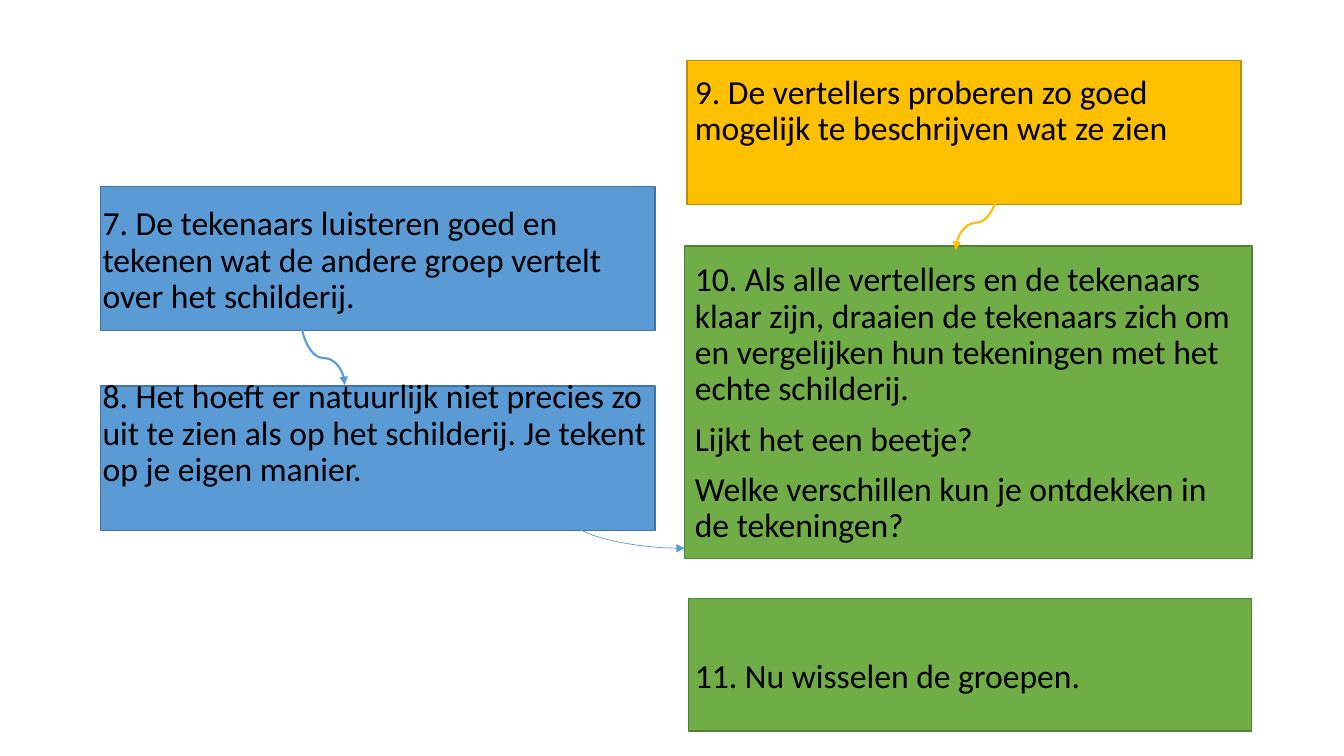
from lxml import etree
from pptx import Presentation
from pptx.dml.color import RGBColor
from pptx.enum.shapes import MSO_CONNECTOR, MSO_SHAPE
from pptx.enum.text import MSO_ANCHOR, MSO_AUTO_SIZE, PP_ALIGN
from pptx.oxml.ns import qn
from pptx.util import Inches, Pt

WIDTH, HEIGHT = Inches(13.33), Inches(7.5)
RECTANGLE = MSO_SHAPE.RECTANGLE
CURVE = MSO_CONNECTOR.CURVE
TOP = MSO_ANCHOR.TOP
LEFT = PP_ALIGN.LEFT
FIXED_SIZE = MSO_AUTO_SIZE.NONE
TWO_CONTENT_LAYOUT = 3

BLUE, BLUE_EDGE = "5B9BD5", "43739E"
GREEN, GREEN_EDGE = "70AD47", "538035"
GOLD, GOLD_EDGE = "FFC000", "BD8E00"
BLACK = "000000"

NORMAL_GAP, BOX_GAP, WIDE_GAP = 10, 46, 82

BOXES = [
    (51.25, 79.2, 41.88, 17.5, GREEN, GREEN_EDGE),
    (51.1, 8, 41.25, 19.07, GOLD, GOLD_EDGE),
    (50.95, 32.53, 42.22, 41.33, GREEN, GREEN_EDGE),
    (7.5, 24.67, 41.25, 19.07, BLUE, BLUE_EDGE),
    (7.5, 51.07, 41.25, 19.07, BLUE, BLUE_EDGE),
]

DRAWER_STEPS = [
    (0, "7. De tekenaars luisteren goed en tekenen wat de andere groep vertelt "
        "over het schilderij."),
    (BOX_GAP, "8. Het hoeft er natuurlijk niet precies zo uit te zien als op het "
              "schilderij. Je tekent op je eigen manier."),
]

TELLER_STEPS = [
    (0, "9. De vertellers proberen zo goed mogelijk te beschrijven wat ze zien"),
    (WIDE_GAP, "10. Als alle vertellers en de tekenaars klaar zijn, draaien de "
               "tekenaars zich om en vergelijken hun tekeningen met het echte "
               "schilderij."),
    (NORMAL_GAP, "Lijkt het een beetje?"),
    (NORMAL_GAP, "Welke verschillen kun je ontdekken in de tekeningen?"),
    (WIDE_GAP, "11. Nu wisselen de groepen."),
]


def across(percent):
    return round(WIDTH * percent / 100)


def down(percent):
    return round(HEIGHT * percent / 100)


def color(code):
    return RGBColor.from_string(code)


def add_box(page, left, top, width, height, fill, edge):
    box = page.shapes.add_shape(
        RECTANGLE, across(left), down(top), across(width), down(height))
    box.shadow.inherit = False
    box.fill.solid()
    box.fill.fore_color.rgb = color(fill)
    box.line.color.rgb = color(edge)
    box.line.width = Pt(1)


def add_step(para, gap, text):
    properties = para._p.get_or_add_pPr()
    properties.set("marL", "0")
    properties.set("indent", "0")
    etree.SubElement(properties, qn("a:buNone"))
    para.alignment = LEFT
    para.line_spacing = 0.9
    para.space_before = Pt(gap)
    para.space_after = Pt(0)
    span = para.add_run()
    span.text = text
    span.font.name = "Calibri"
    span.font.size = Pt(24)
    span.font.color.rgb = color(BLACK)


def fill_body(page, index, left, top, width, height, steps):
    body = page.placeholders[index]
    body.left, body.top = across(left), down(top)
    body.width, body.height = across(width), down(height)
    page.shapes._spTree.append(body._element)
    frame = body.text_frame
    frame.word_wrap = True
    frame.auto_size = FIXED_SIZE
    frame.vertical_anchor = TOP
    for number, (gap, text) in enumerate(steps):
        para = frame.add_paragraph() if number else frame.paragraphs[0]
        add_step(para, gap, text)


def style_arrow(arrow, code, weight):
    arrow.line.color.rgb = color(code)
    arrow.line.width = Pt(weight)
    etree.SubElement(arrow.line._get_or_add_ln(), qn("a:tailEnd"), type="triangle")
    etree.SubElement(arrow._element.spPr, qn("a:effectLst"))


def add_side_arrow(page, start, end, code, weight):
    arrow = page.shapes.add_connector(
        CURVE, across(start[0]), down(start[1]), across(end[0]), down(end[1]))
    style_arrow(arrow, code, weight)


def add_down_arrow(page, start, end, code, weight):
    x1, y1, x2, y2 = across(start[0]), down(start[1]), across(end[0]), down(end[1])
    center_x, center_y = (x1 + x2) // 2, (y1 + y2) // 2
    half_length, half_shift = (y2 - y1) // 2, abs(x2 - x1) // 2
    side = 1 if x2 < x1 else -1
    arrow = page.shapes.add_connector(
        CURVE,
        center_x - side * half_length, center_y - half_shift,
        center_x + side * half_length, center_y + half_shift)
    properties = arrow._element.spPr
    quarter_turn = 90 if side == 1 else 270
    properties.find(qn("a:xfrm")).set("rot", str(quarter_turn * 60000))
    guides = properties.find(qn("a:prstGeom")).find(qn("a:avLst"))
    etree.SubElement(guides, qn("a:gd"), name="adj1", fmla="val 60600")
    style_arrow(arrow, code, weight)


def main():
    deck = Presentation()
    deck.slide_width, deck.slide_height = WIDTH, HEIGHT
    page = deck.slides.add_slide(deck.slide_layouts[TWO_CONTENT_LAYOUT])
    title = page.shapes.title._element
    title.getparent().remove(title)

    for box in BOXES:
        add_box(page, *box)
    fill_body(page, 1, 6.88, 26.67, 42.5, 71.2, DRAWER_STEPS)
    fill_body(page, 2, 50.95, 9.33, 42.5, 86.53, TELLER_STEPS)

    add_down_arrow(page, (74.33, 23.87), (71.1, 33.07), GOLD, 1.5)
    add_down_arrow(page, (22.36, 41.87), (25.66, 50.93), BLUE, 1.5)
    add_side_arrow(page, (34, 64.67), (50.95, 72.53), BLUE, 0.5)
    deck.save("out.pptx")


if __name__ == "__main__":
    main()
